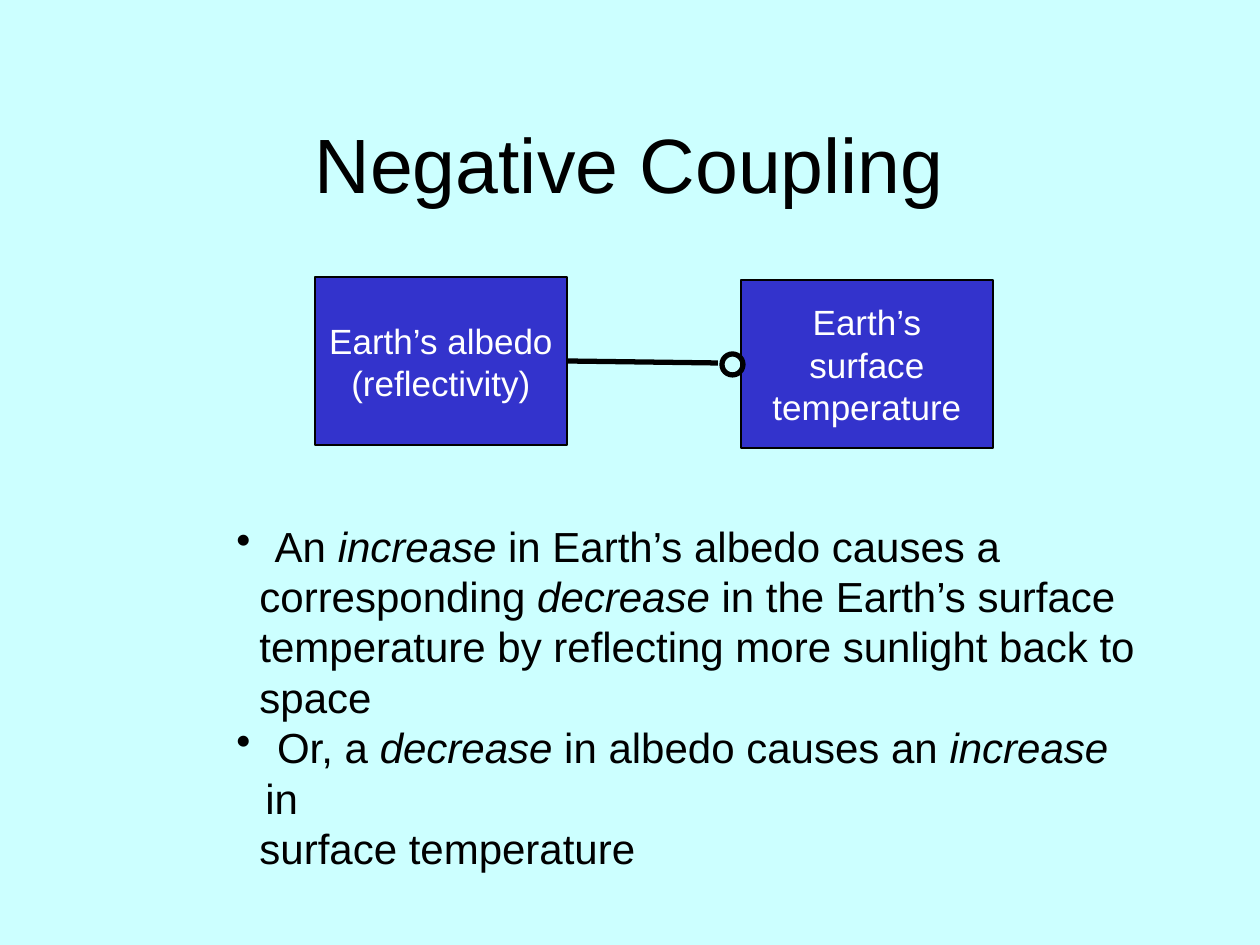
"""Build the Negative Coupling slide."""
import dataclasses

import lxml.etree
import pptx
import pptx.dml.color
import pptx.enum.shapes
import pptx.enum.text
import pptx.oxml.ns
import pptx.util

SCALE = 914400 // 126
SHAPE = pptx.enum.shapes.MSO_SHAPE
ALIGN = pptx.enum.text.PP_ALIGN
MIDDLE = pptx.enum.text.MSO_ANCHOR.MIDDLE


@dataclasses.dataclass(frozen=True)
class Theme:
    """Colours, font and type sizes of the slide."""
    back: str = "CCFFFF"
    ink: str = "000000"
    box: str = "3333CC"
    light: str = "FFFFFF"
    font: str = "Arial"
    title: int = 44
    body: int = 24
    label: int = 20
    lead: float = 1.2
    thin: float = 0.75
    thick: float = 3


THEME = Theme()


def px(*sizes):
    """Turn pixel lengths into EMU."""
    return [pptx.util.Emu(size * SCALE) for size in sizes]


def rgb(code):
    """Make a colour from its hex code."""
    return pptx.dml.color.RGBColor.from_string(code)


def style(para, size, color, align):
    """Set the font and alignment of a paragraph."""
    para.font.name = THEME.font
    para.font.size = pptx.util.Pt(size)
    para.font.color.rgb = rgb(color)
    para.alignment = align


def get_para(frame, index):
    """Return the first paragraph or a new one."""
    return frame.add_paragraph() if index else frame.paragraphs[0]


def stroke(line, width):
    """Give a line its ink colour and width."""
    line.color.rgb = rgb(THEME.ink)
    line.width = pptx.util.Pt(width)


def add_title(slide, text, place):
    """Place and format the title."""
    title = slide.shapes.title
    title.left, title.top, title.width, title.height = px(*place)
    frame = title.text_frame
    frame.text = text
    frame.vertical_anchor = MIDDLE
    style(frame.paragraphs[0], THEME.title, THEME.ink, ALIGN.CENTER)


def add_box(slide, lines, place):
    """Add a filled box with centred lines of text."""
    box = slide.shapes.add_shape(SHAPE.RECTANGLE, *px(*place))
    box.shadow.inherit = False
    box.fill.solid()
    box.fill.fore_color.rgb = rgb(THEME.box)
    stroke(box.line, THEME.thin)
    frame = box.text_frame
    frame.word_wrap = False
    frame.vertical_anchor = MIDDLE
    for index, line in enumerate(lines):
        para = get_para(frame, index)
        para.text = line
        para.line_spacing = pptx.util.Pt(THEME.label * THEME.lead)
        style(para, THEME.label, THEME.light, ALIGN.CENTER)
    return box


def add_link(slide, box, end):
    """Draw a line from the right side of a box to a point."""
    link = slide.shapes.add_connector(
        pptx.enum.shapes.MSO_CONNECTOR.STRAIGHT, 0, 0, *px(*end))
    link.begin_connect(box, 3)
    stroke(link.line, THEME.thick)
    props = link._element.spPr
    lxml.etree.SubElement(props, pptx.oxml.ns.qn("a:effectLst"))


def add_ring(slide, place):
    """Add the open circle that marks a negative coupling."""
    ring = slide.shapes.add_shape(SHAPE.OVAL, *px(*place))
    ring.shadow.inherit = False
    ring.fill.background()
    stroke(ring.line, THEME.thick)


def indent(para, bullet):
    """Indent a paragraph, with a hanging bullet if asked."""
    props = para._p.get_or_add_pPr()
    left = px(29 if bullet else 23)[0]
    props.set("marL", str(left))
    props.set("indent", str(-left if bullet else 0))
    if bullet:
        mark = pptx.oxml.ns.qn("a:buChar")
        item = props.makeelement(mark, {"char": "•"})
        props.insert_element_before(item, "a:tabLst", "a:defRPr", "a:extLst")


def add_notes(slide, lines, place):
    """Add the body text; odd parts of a line are italic."""
    frame = slide.shapes.add_textbox(*px(*place)).text_frame
    frame.word_wrap = True
    for index, (bullet, parts) in enumerate(lines):
        para = get_para(frame, index)
        style(para, THEME.body, THEME.ink, ALIGN.LEFT)
        para.line_spacing = pptx.util.Pt(THEME.body * THEME.lead)
        indent(para, bullet)
        for count, part in enumerate(parts):
            run = para.add_run()
            run.text = part
            if count % 2:
                run.font.italic = True


def main():
    """Build and save the slide."""
    deck = pptx.Presentation()
    deck.slide_width, deck.slide_height = px(1260, 945)
    slide = deck.slides.add_slide(deck.slide_layouts[5])
    slide.background.fill.solid()
    slide.background.fill.fore_color.rgb = rgb(THEME.back)

    add_title(slide, "Negative Coupling", (94, 84, 1071, 158))
    cause = add_box(slide, ["Earth’s albedo", "(reflectivity)"],
                    (315, 277, 252, 168))
    add_box(slide, ["Earth’s", "surface", "temperature"],
            (741, 280, 252, 168))
    add_notes(slide, [
        (True, [" An ", "increase ", "in Earth’s albedo causes a"]),
        (False, ["corresponding ", "decrease ", "in the Earth’s surface"]),
        (False, ["temperature by reflecting more sunlight back to"]),
        (False, ["space"]),
        (True, [" Or, a ", "decrease", " in albedo causes an ",
                "increase", " in"]),
        (False, ["surface temperature"]),
    ], (224, 514, 930, 315))
    add_link(slide, cause, (718, 363))
    add_ring(slide, (722, 354, 21, 21))
    deck.save("out.pptx")


if __name__ == "__main__":
    main()
